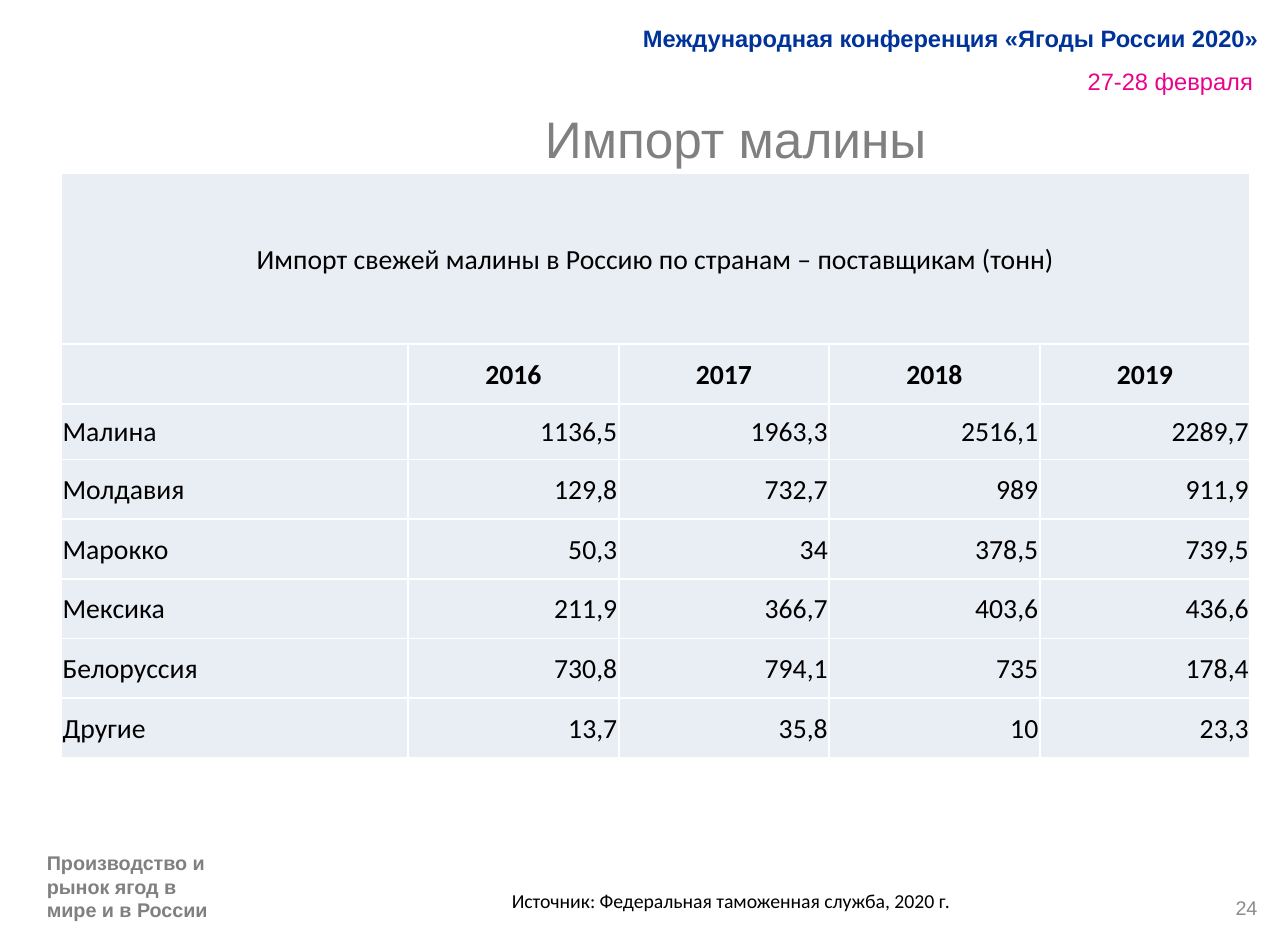
from lxml import etree
from pptx import Presentation
from pptx.dml.color import RGBColor
from pptx.enum import text
from pptx.oxml.ns import qn
from pptx.util import Cm, Inches, Pt

BLACK = RGBColor(0x00, 0x00, 0x00)
NAVY = RGBColor(0x00, 0x33, 0x99)
PINK = RGBColor(0xEB, 0x02, 0x8B)
GRAY = RGBColor(0x80, 0x80, 0x80)
LIGHT_GRAY = RGBColor(0x8C, 0x8C, 0x8C)
CELL_FILL = RGBColor(0xE9, 0xED, 0xF4)
LEFT, CENTER, RIGHT = text.PP_ALIGN.LEFT, text.PP_ALIGN.CENTER, text.PP_ALIGN.RIGHT
TOP, MIDDLE = text.MSO_ANCHOR.TOP, text.MSO_ANCHOR.MIDDLE


def write(tf, words, size, font, color, align, bold=False):
    p = tf.paragraphs[0]
    p.alignment = align
    r = p.add_run()
    r.text = words
    r.font.size = Pt(size)
    r.font.name = font
    r.font.bold = bold
    r.font.color.rgb = color
    return p


def add_text(box, words, size, color, align, anchor, bold=False, font="Arial", inset=(0.08, 0.04)):
    tf = s.shapes.add_textbox(*map(Inches, box)).text_frame
    tf.word_wrap = True
    tf.vertical_anchor = anchor
    tf.margin_left = tf.margin_right = Inches(inset[0])
    tf.margin_top = tf.margin_bottom = Inches(inset[1])
    return write(tf, words, size, font, color, align, bold)


prs = Presentation()
prs.slide_width = Cm(23)
prs.slide_height = Cm(17)
s = prs.slides.add_slide(prs.slide_layouts[6])

# Header and title
date = add_text((7.28, 0.35, 1.61, 0.37), "27-28 февраля", 12, PINK, RIGHT, TOP)
date.line_spacing = Pt(20.4)
add_text((4.23, 0.07, 4.7, 0.39), "Международная конференция «Ягоды России 2020»",
         12, NAVY, RIGHT, MIDDLE, bold=True)
add_text((1.46, 0.71, 7.43, 0.78), "Импорт малины", 26, GRAY, CENTER, TOP)

# Import table
rows = [
    ["Импорт свежей малины в Россию по странам – поставщикам (тонн)", "", "", "", ""],
    ["", "2016", "2017", "2018", "2019"],
    ["Малина", "1136,5", "1963,3", "2516,1", "2289,7"],
    ["Молдавия", "129,8", "732,7", "989", "911,9"],
    ["Марокко", "50,3", "34", "378,5", "739,5"],
    ["Мексика", "211,9", "366,7", "403,6", "436,6"],
    ["Белоруссия", "730,8", "794,1", "735", "178,4"],
    ["Другие", "13,7", "35,8", "10", "23,3"],
]
table = s.shapes.add_table(len(rows), len(rows[0]), Inches(0.43), Inches(1.22),
                           Inches(8.35), Inches(4.09)).table
table.first_row = table.horz_banding = False
for column, width in zip(table.columns, [2.44] + [1.48] * 4):
    column.width = Inches(width)
for row, height in zip(table.rows, [1.2, 0.42, 0.39] + [0.42] * 5):
    row.height = Inches(height)
table.cell(0, 0).merge(table.cell(0, 4))

for i, row in enumerate(rows):
    for j, words in enumerate(row):
        cell = table.cell(i, j)
        cell.vertical_anchor = MIDDLE
        cell.margin_left = cell.margin_right = cell.margin_top = Inches(0.01)
        cell.margin_bottom = 0
        tcPr = cell._tc.get_or_add_tcPr()
        for side in ("lnL", "lnR", "lnT", "lnB"):
            ln = etree.SubElement(tcPr, qn(f"a:{side}"), w=str(Pt(1)))
            fill = etree.SubElement(ln, qn("a:solidFill"))
            etree.SubElement(fill, qn("a:srgbClr"), val="FFFFFF")
        cell.fill.solid()
        cell.fill.fore_color.rgb = CELL_FILL
        if words:
            align = CENTER if i < 2 else RIGHT if j else LEFT
            write(cell.text_frame, words, 14, "Calibri", BLACK, align, bold=i == 1)

# Footer
add_text((3.5, 6.2, 4.8, 0.27), "Источник: Федеральная таможенная служба, 2020 г.",
         10, BLACK, LEFT, TOP, font="Calibri", inset=(0.1, 0.05))
add_text((0.25, 5.87, 1.44, 0.72), "Производство и рынок ягод в мире и в России",
         10, GRAY, LEFT, MIDDLE, bold=True)
add_text((6.81, 6.2, 2.11, 0.36), "24", 10, LIGHT_GRAY, RIGHT, MIDDLE)

prs.save("out.pptx")
